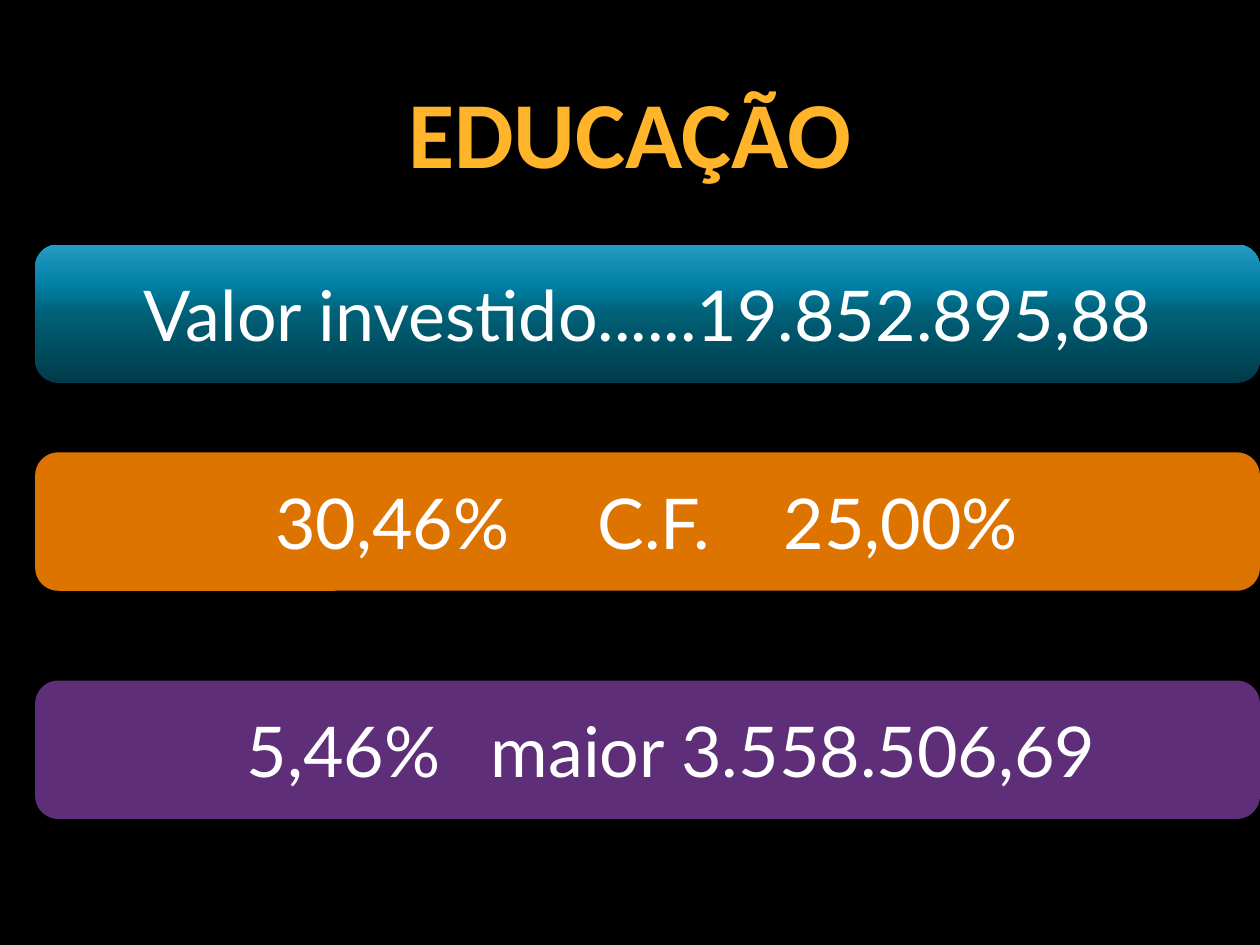
from lxml import etree
from pptx import Presentation
from pptx.dml.color import RGBColor
from pptx.enum.shapes import MSO_SHAPE
from pptx.enum.text import MSO_ANCHOR, PP_ALIGN
from pptx.oxml.ns import qn
from pptx.util import Cm, Pt

CENTER, LEFT = PP_ALIGN.CENTER, PP_ALIGN.LEFT
MIDDLE = MSO_ANCHOR.MIDDLE
ROUNDED = MSO_SHAPE.ROUNDED_RECTANGLE

BLACK = RGBColor(0x00, 0x00, 0x00)
WHITE = RGBColor(0xFF, 0xFF, 0xFF)
ORANGE = RGBColor(0xDE, 0x74, 0x00)
PURPLE = RGBColor(0x5E, 0x2E, 0x79)
GOLD_STOPS = [
    (0, RGBColor(0xFF, 0xC0, 0x5D)),
    (49, RGBColor(0xFF, 0xB4, 0x29)),
    (50, RGBColor(0xD3, 0x9F, 0x00)),
    (92, RGBColor(0xBD, 0x8E, 0x00)),
    (100, RGBColor(0xB9, 0x8C, 0x00)),
]
TEAL_STOPS = [
    (0, RGBColor(0x00, 0x3B, 0x4A)),
    (50, RGBColor(0x00, 0x60, 0x77)),
    (70, RGBColor(0x00, 0x7F, 0xA4)),
    (100, RGBColor(0x26, 0x9A, 0xC4)),
]


def set_gradient(fill, owner, stops, angle):
    """Fill with any number of stops; owner is the XML element holding the fill."""
    fill.gradient()
    fill.gradient_angle = angle
    stop_list = owner.find(".//" + qn("a:gsLst"))
    for old_stop in list(stop_list):
        stop_list.remove(old_stop)
    for percent, color in stops:
        stop = etree.SubElement(stop_list, qn("a:gs"), pos=str(percent * 1000))
        etree.SubElement(stop, qn("a:srgbClr"), val=str(color))


prs = Presentation()
prs.slide_width, prs.slide_height = Cm(25.4), Cm(19.05)
slide = prs.slides.add_slide(prs.slide_layouts[6])
slide.background.fill.solid()
slide.background.fill.fore_color.rgb = BLACK

heading = slide.shapes.add_textbox(Cm(7.92), Cm(1.37), Cm(9.55), Cm(2.57))
heading.text_frame.text = "EDUCAÇÃO"
heading_line = heading.text_frame.paragraphs[0]
heading_line.alignment = CENTER
heading_run = heading_line.runs[0]
heading_run.font.name = "Calibri"
heading_run.font.size = Pt(54)
heading_run.font.bold = True
set_gradient(heading_run.font.fill, heading_line._p, GOLD_STOPS, 270)

# top, text, solid colour (None: teal gradient), left inset, tab stops from that inset
bars = [
    (4.93, "Valor investido......19.852.895,88", None, 0.25, []),
    (9.12, "30,46%\tC.F.\t25,00%", ORANGE, 4.7, [6.5, 10.25]),
    (13.72, "5,46%\tmaior 3.558.506,69", PURPLE, 4.13, [4.92]),
]
for top, text, color, inset, tab_stops in bars:
    bar = slide.shapes.add_shape(ROUNDED, Cm(0.71), Cm(top), Cm(24.69), Cm(2.79))
    bar.shadow.inherit = False
    bar.line.fill.background()
    if color is None:
        set_gradient(bar.fill, bar._element.spPr, TEAL_STOPS, 90)
    else:
        bar.fill.solid()
        bar.fill.fore_color.rgb = color

    frame = bar.text_frame
    frame.word_wrap = True
    frame.vertical_anchor = MIDDLE
    frame.margin_left = Cm(inset)
    frame.text = text
    line = frame.paragraphs[0]
    line.alignment = LEFT if tab_stops else CENTER
    if tab_stops:
        tab_list = etree.SubElement(line._p.get_or_add_pPr(), qn("a:tabLst"))
        for position in tab_stops:
            etree.SubElement(tab_list, qn("a:tab"), pos=str(Cm(position)), algn="l")
    for run in line.runs:
        run.font.name = "Lato"
        run.font.size = Pt(40)
        run.font.color.rgb = WHITE

prs.save("out.pptx")
